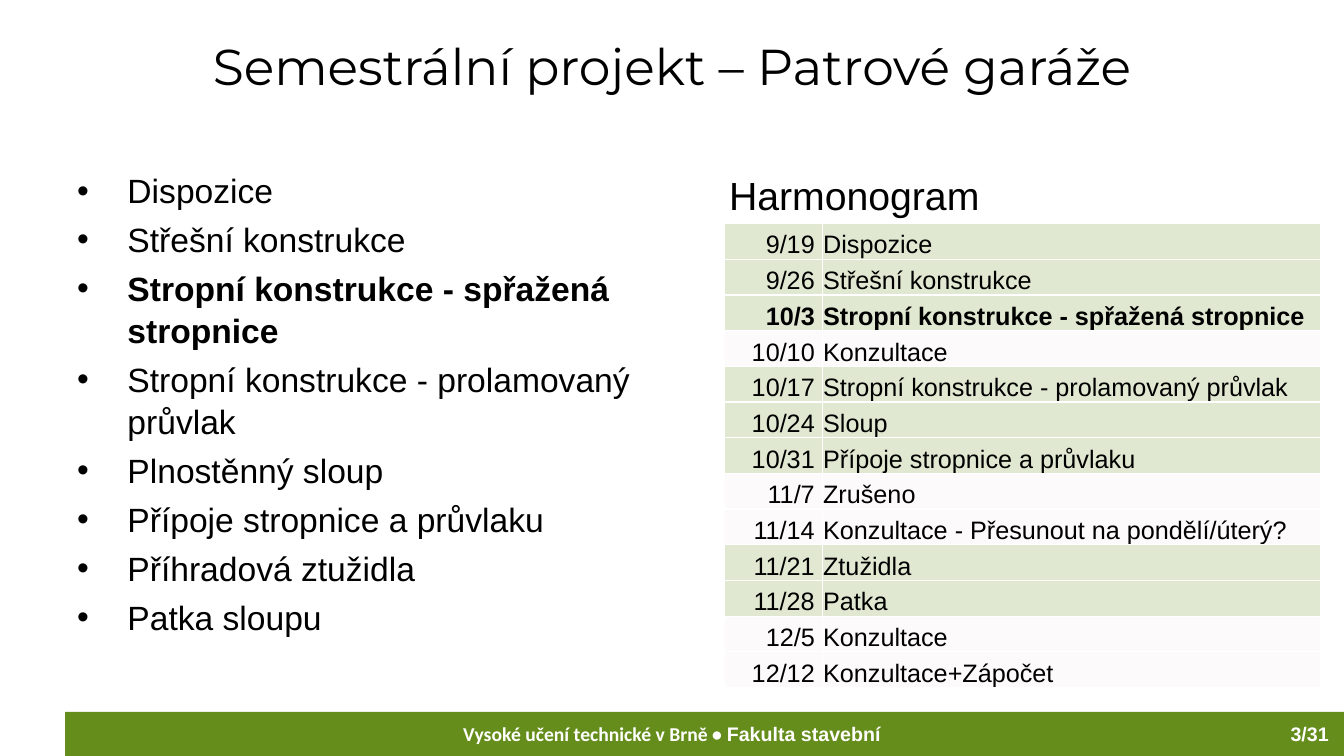
from lxml.etree import SubElement
from pptx import Presentation
from pptx.dml.color import RGBColor as RGB
from pptx.enum.shapes import MSO_SHAPE as SHAPE
from pptx.enum.text import MSO_ANCHOR as ANCHOR, PP_ALIGN as ALIGN
from pptx.oxml.ns import qn
from pptx.util import Pt

PX = 9525
COLORS = {"green": "658D1B", "pale": "F4E7E7", "white": "FFFFFF", "black": "000000"}
CURRENT = "Stropní konstrukce - spřažená stropnice"
TOPICS = [
    "Dispozice",
    "Střešní konstrukce",
    CURRENT,
    "Stropní konstrukce - prolamovaný průvlak",
    "Plnostěnný sloup",
    "Přípoje stropnice a průvlaku",
    "Příhradová ztužidla",
    "Patka sloupu",
]
SCHEDULE = [
    ("9/19", "Dispozice"),
    ("9/26", "Střešní konstrukce"),
    ("10/3", CURRENT),
    ("10/10", "Konzultace"),
    ("10/17", "Stropní konstrukce - prolamovaný průvlak"),
    ("10/24", "Sloup"),
    ("10/31", "Přípoje stropnice a průvlaku"),
    ("11/7", "Zrušeno"),
    ("11/14", "Konzultace - Přesunout na pondělí/úterý?"),
    ("11/21", "Ztužidla"),
    ("11/28", "Patka"),
    ("12/5", "Konzultace"),
    ("12/12", "Konzultace+Zápočet"),
]
NO_NEW_TOPIC = ("Konzultace", "Zrušeno")


def box(*lengths):
    """Turn px lengths into EMU."""
    return [n * PX for n in lengths]


def add_run(p, text, size, font="Arial", color="black", bold=False):
    """Add one formatted run to a paragraph."""
    r = p.add_run()
    r.text = text
    r.font.size = Pt(size)
    r.font.name = font
    r.font.bold = bold
    r.font.color.rgb = RGB.from_string(COLORS[color])


def add_text(s, at, align=ALIGN.LEFT):
    """Add a wrapping text box and return its text frame."""
    tf = s.shapes.add_textbox(*box(*at)).text_frame
    tf.word_wrap = True
    tf.paragraphs[0].alignment = align
    return tf


def add_footer(s):
    """Add the green bar with the school name and page number."""
    bar = s.shapes.add_shape(SHAPE.RECTANGLE, *box(62, 678, 1218, 42))
    bar.shadow.inherit = False
    bar.fill.solid()
    bar.fill.fore_color.rgb = RGB.from_string(COLORS["green"])
    bar.line.fill.background()
    p = add_text(s, (0, 683, 1280, 32), ALIGN.CENTER).paragraphs[0]
    add_run(p, "Vysoké učení technické v Brně • ", 14, "Calibri", "white", True)
    add_run(p, "Fakulta stavební", 14, "Arial", "white", True)
    p = add_text(s, (1149, 683, 126, 32), ALIGN.RIGHT).paragraphs[0]
    add_run(p, "3/31", 14, "Arial", "white", True)


def add_topics(s):
    """Add the bulleted list of project topics."""
    tf = add_text(s, (64, 156, 568, 488))
    for i, topic in enumerate(TOPICS):
        p = tf.add_paragraph() if i else tf.paragraphs[0]
        pPr = p._p.get_or_add_pPr()
        pPr.set("marL", str(48 * PX))
        pPr.set("indent", str(-48 * PX))
        SubElement(pPr, qn("a:buFont"), typeface="Arial")
        SubElement(pPr, qn("a:buChar"), char="•")
        p.line_spacing = 1.04
        if i:
            p.space_before = Pt(5)
        add_run(p, topic, 24, bold=topic == CURRENT)


def style_cell(cell, color):
    """Give a cell white borders and a translucent fill."""
    tcPr = cell._tc.get_or_add_tcPr()
    for side in ("lnL", "lnR", "lnT", "lnB"):
        ln = SubElement(tcPr, qn(f"a:{side}"), w=str(Pt(1)))
        line_fill = SubElement(ln, qn("a:solidFill"))
        SubElement(line_fill, qn("a:srgbClr"), val=COLORS["white"])
    fill = SubElement(tcPr, qn("a:solidFill"))
    clr = SubElement(fill, qn("a:srgbClr"), val=COLORS[color])
    SubElement(clr, qn("a:alpha"), val="20000")


def add_schedule(s):
    """Add the table of dates and topics."""
    rows = len(SCHEDULE)
    table = s.shapes.add_table(rows, 2, *box(690, 213, 568, 34 * rows)).table
    table.first_row = table.horz_banding = False
    for column, width in zip(table.columns, box(93, 475)):
        column.width = width
    for i, entry in enumerate(SCHEDULE):
        color = "pale" if entry[1].startswith(NO_NEW_TOPIC) else "green"
        for j, text in enumerate(entry):
            cell = table.cell(i, j)
            style_cell(cell, color)
            cell.vertical_anchor = ANCHOR.BOTTOM
            cell.margin_left = cell.margin_top = PX
            cell.margin_right = PX if j else 7 * PX
            cell.margin_bottom = 0
            p = cell.text_frame.paragraphs[0]
            p.alignment = ALIGN.LEFT if j else ALIGN.RIGHT
            add_run(p, text, 18, bold=entry[1] == CURRENT)


def main():
    """Build and save the slide."""
    prs = Presentation()
    prs.slide_width, prs.slide_height = box(1280, 720)
    s = prs.slides.add_slide(prs.slide_layouts[6])
    add_footer(s)
    p = add_text(s, (64, 29, 1152, 105), ALIGN.CENTER).paragraphs[0]
    add_run(p, "Semestrální projekt – Patrové garáže", 36, "Montserrat")
    add_topics(s)
    p = add_text(s, (685, 158, 568, 54)).paragraphs[0]
    add_run(p, "Harmonogram", 28)
    add_schedule(s)
    prs.save("out.pptx")


if __name__ == "__main__":
    main()
